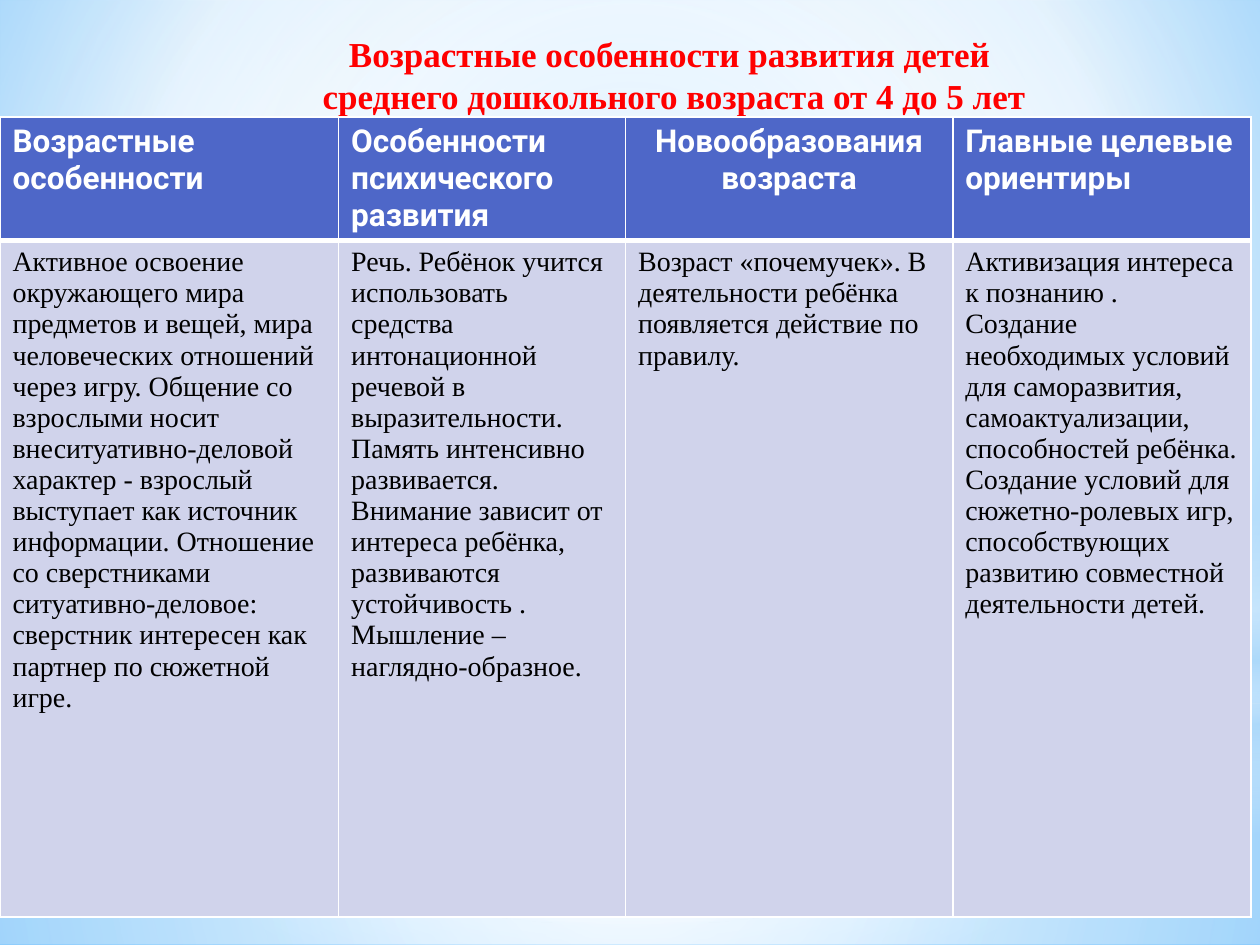
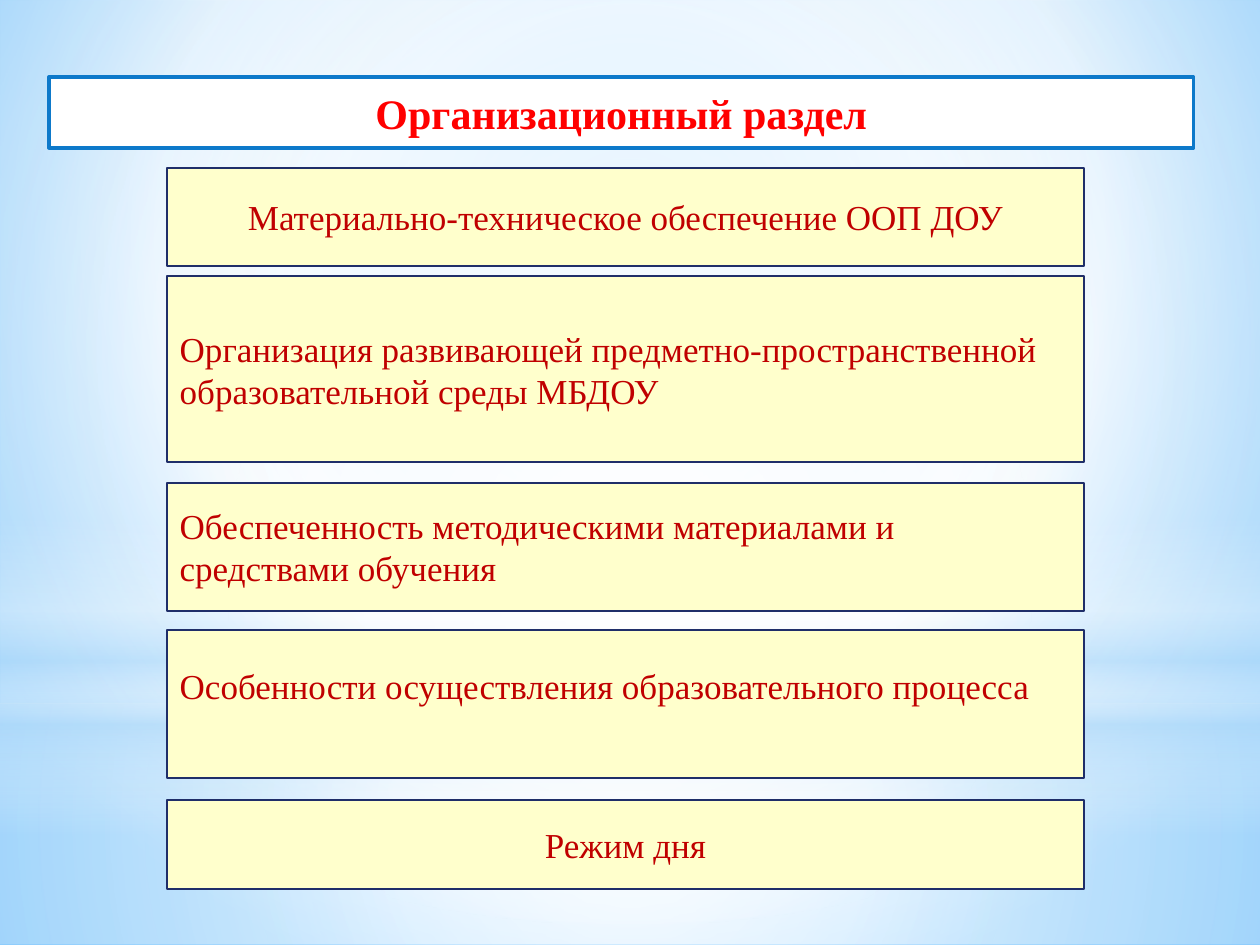
from dataclasses import dataclass
from typing import Any

from lxml import etree
from pptx import Presentation
from pptx.dml.color import RGBColor
from pptx.enum.shapes import MSO_SHAPE as Geo
from pptx.enum.text import MSO_ANCHOR as Anchor, MSO_AUTO_SIZE as Fit, PP_ALIGN as Align
from pptx.oxml import parse_xml
from pptx.oxml.ns import nsdecls, qn
from pptx.util import Pt

WHITE = RGBColor(0xFF, 0xFF, 0xFF)
BLACK = RGBColor(0x00, 0x00, 0x00)
RED = RGBColor(0xFF, 0x00, 0x00)
WINE = RGBColor(0xC0, 0x00, 0x00)
CREAM = RGBColor(0xFF, 0xFF, 0xCC)
NAVY = RGBColor(0x1F, 0x2E, 0x69)
BLUE = RGBColor(0x0D, 0x79, 0xCA)
INDIGO = RGBColor(0x4E, 0x67, 0xC8)
LILAC = RGBColor(0xD0, 0xD3, 0xEB)
SKY = RGBColor(0xB4, 0xDC, 0xFA)
PALE = RGBColor(0x9E, 0xD5, 0xFF)
AZURE = RGBColor(0x5B, 0xB9, 0xFF)

SERIF, SANS = "Times New Roman", "Roboto"
HEAD = {"name": SERIF, "size": Pt(20), "bold": True, "color": RED}
FRAME = {**HEAD, "size": Pt(24)}
ITEM = {"name": SERIF, "size": Pt(20), "bold": False, "color": WINE}
TOP = {"name": SANS, "size": Pt(18), "bold": True, "color": WHITE}
CELL = {"name": SERIF, "size": Pt(16), "bold": False, "color": BLACK}

Stops = list[tuple[int, RGBColor, int]]  # place %, colour, opacity %
MID = (50, 50, 50, 50)


@dataclass
class Glow:
    geo: Geo
    top: float
    high: float
    stops: Stops
    focus: tuple | None = MID


@dataclass
class Box:
    text: str
    top: float
    high: float
    align: Align = Align.LEFT
    foot: float = 3.6


@dataclass
class Column:
    wide: float
    head: list[str]
    body: list[str]
    align: Align = Align.LEFT


GLOWS = [
    Glow(Geo.RECTANGLE, 402, 138, [(0, WHITE, 91), (37, WHITE, 76), (100, SKY, 79)]),
    Glow(Geo.RECTANGLE, 0, 402, [(0, WHITE, 89), (48, WHITE, 62), (100, SKY, 79)]),
    Glow(Geo.RECTANGLE, 296.6, 180,
         [(0, WHITE, 0), (29, WHITE, 30), (45, SKY, 40),
          (55, WHITE, 26), (65, SKY, 60), (100, WHITE, 0)], None),
    Glow(Geo.OVAL, 126, 402, [(0, WHITE, 100), (56, WHITE, 0)]),
]

COLUMNS = [
    Column(193.5, ["Возрастные особенности"], [
        "Активное освоение окружающего мира предметов и вещей, мира человеческих "
        "отношений через игру. Общение со взрослыми носит внеситуативно-деловой "
        "характер - взрослый выступает как источник информации. Отношение со "
        "сверстниками ситуативно-деловое: сверстник интересен как партнер по "
        "сюжетной игре."]),
    Column(164, ["Особенности психического развития"], [
        "Речь. Ребёнок учится использовать средства интонационной речевой в",
        "выразительности.",
        "Память интенсивно развивается. Внимание зависит от интереса ребёнка, "
        "развиваются устойчивость .",
        "Мышление –наглядно-образное."]),
    Column(187, ["Новообразования", "возраста"], [
        "Возраст «почемучек». В деятельности ребёнка появляется действие по "
        "правилу."], Align.CENTER),
    Column(170.5, ["Главные целевые ориентиры"], [
        "Активизация интереса к познанию .",
        "Создание необходимых условий для саморазвития, самоактуализации, "
        "способностей ребёнка. Создание условий для сюжетно-ролевых игр, "
        "способствующих развитию совместной деятельности детей."]),
]

BOXES = [
    Box("Материально-техническое обеспечение ООП ДОУ", 95.8, 56.2, Align.CENTER),
    Box("Организация развивающей предметно-пространственной образовательной "
        "среды МБДОУ", 157.6, 106.6),
    Box("Обеспеченность методическими материалами и средствами обучения",
        275.8, 73.2),
    Box("Особенности осуществления образовательного процесса", 360, 84.4, foot=24.6),
    Box("Режим дня", 457.2, 50.6, Align.CENTER),
]


def blend(root: Any, stops: Stops, focus: tuple | None) -> None:
    """Turn the first solid fill under root into a gradient."""
    marks = "".join(
        f'<a:gs pos="{at * 1000}"><a:srgbClr val="{tone}">'
        f'<a:alpha val="{seen * 1000}"/></a:srgbClr></a:gs>'
        for at, tone, seen in stops)
    if focus:
        sides = " ".join(f'{side}="{part * 1000}"' for side, part in zip("ltrb", focus))
        way = f'<a:path path="circle"><a:fillToRect {sides}/></a:path>'
    else:
        way = '<a:lin ang="5400000" scaled="0"/>'
    old = root.find(".//" + qn("a:solidFill"))
    old.getparent().replace(old, parse_xml(
        f'<a:gradFill {nsdecls("a")} rotWithShape="1">'
        f'<a:gsLst>{marks}</a:gsLst>{way}</a:gradFill>'))


def write(frame: Any, lines: list[str], style: dict, align: Align) -> None:
    for num, line in enumerate(lines):
        para = frame.add_paragraph() if num else frame.paragraphs[0]
        para.text, para.alignment = line, align
        for run in para.runs:
            for key, value in style.items():
                if key == "color":
                    run.font.color.rgb = value
                else:
                    setattr(run.font, key, value)


def place(shape: Any, *spot: float) -> None:
    for key, value in zip(("left", "top", "width", "height"), spot):
        setattr(shape, key, Pt(value))


def paint(shape: Any, fill: RGBColor, edge: RGBColor, thick: float) -> None:
    shape.fill.solid()
    shape.fill.fore_color.rgb = fill
    shape.line.color.rgb = edge
    shape.line.width = Pt(thick)


def setup(frame: Any, anchor: Anchor, foot: float = 3.6) -> None:
    form = {"word_wrap": True, "auto_size": Fit.NONE, "vertical_anchor": anchor,
            "margin_left": Pt(7.2), "margin_right": Pt(7.2),
            "margin_top": Pt(3.6), "margin_bottom": Pt(foot)}
    for key, value in form.items():
        setattr(frame, key, value)


def backdrop(slide: Any) -> None:
    """Give the master its background and glows, drawn by way of one slide."""
    master = slide.slide_layout.slide_master
    master.background.fill.solid()
    blend(master._element, [(0, PALE, 100), (60, WHITE, 100), (100, AZURE, 100)],
          (20, 10, 20, 60))
    for num, glow in enumerate(GLOWS):
        shape = slide.shapes.add_shape(
            glow.geo, 0, Pt(glow.top), Pt(720), Pt(glow.high))
        shape.shadow.inherit = False
        shape.line.fill.background()
        shape.fill.solid()
        blend(shape._element, glow.stops, glow.focus)
        master.shapes._spTree.insert(2 + num, shape._element)


def border(cell: Any, **sides: float) -> None:
    props = cell._tc.get_or_add_tcPr()
    for num, (side, thick) in enumerate(sides.items()):
        props.insert(num, parse_xml(
            f'<a:ln{side} {nsdecls("a")} w="{Pt(thick)}"><a:solidFill>'
            f'<a:srgbClr val="{WHITE}"/></a:solidFill></a:ln{side}>'))


def ages(slide: Any) -> None:
    title = slide.shapes.title
    place(title, 58.4, 15.2, 653.6, 51)
    setup(title.text_frame, Anchor.TOP)
    write(title.text_frame, ["Возрастные особенности развития детей \v"
                             "среднего дошкольного возраста от 4 до 5 лет"],
          HEAD, Align.CENTER)
    wide = sum(col.wide for col in COLUMNS)
    table = slide.shapes.add_table(
        2, len(COLUMNS), 0, Pt(66.8), Pt(wide), Pt(457)).table
    for row, high in zip(table.rows, (70.4, 386.6)):
        row.height = Pt(high)
    for num, col in enumerate(COLUMNS):
        table.columns[num].width = Pt(col.wide)
        rows = ((col.head, TOP, col.align, INDIGO, 1, 3),
                (col.body, CELL, Align.LEFT, LILAC, 3, 1))
        for row, (lines, style, align, fill, over, under) in enumerate(rows):
            cell = table.cell(row, num)
            write(cell.text_frame, lines, style, align)
            cell.fill.solid()
            cell.fill.fore_color.rgb = fill
            border(cell, L=1, R=1, T=over, B=under)


def section(slide: Any) -> None:
    title = slide.shapes.title
    place(title, 28, 44, 654, 40.4)
    geom = etree.SubElement(title._element.spPr, qn("a:prstGeom"), prst="roundRect")
    etree.SubElement(geom, qn("a:avLst"))
    paint(title, WHITE, BLUE, 2.25)
    setup(title.text_frame, Anchor.MIDDLE)
    write(title.text_frame, ["Организационный раздел"], FRAME, Align.CENTER)
    for box in BOXES:
        shape = slide.shapes.add_shape(
            Geo.RECTANGLE, Pt(95.6), Pt(box.top), Pt(523.8), Pt(box.high))
        shape.shadow.inherit = False
        paint(shape, CREAM, NAVY, 1.25)
        setup(shape.text_frame, Anchor.MIDDLE, box.foot)
        write(shape.text_frame, [box.text], ITEM, box.align)


def main() -> None:
    deck = Presentation()
    deck.slide_width, deck.slide_height = Pt(720), Pt(540)
    layout = deck.slide_layouts.get_by_name("Title Only")
    first, second = (deck.slides.add_slide(layout) for _ in range(2))
    backdrop(first)
    ages(first)
    section(second)
    deck.save("out.pptx")


if __name__ == "__main__":
    main()
